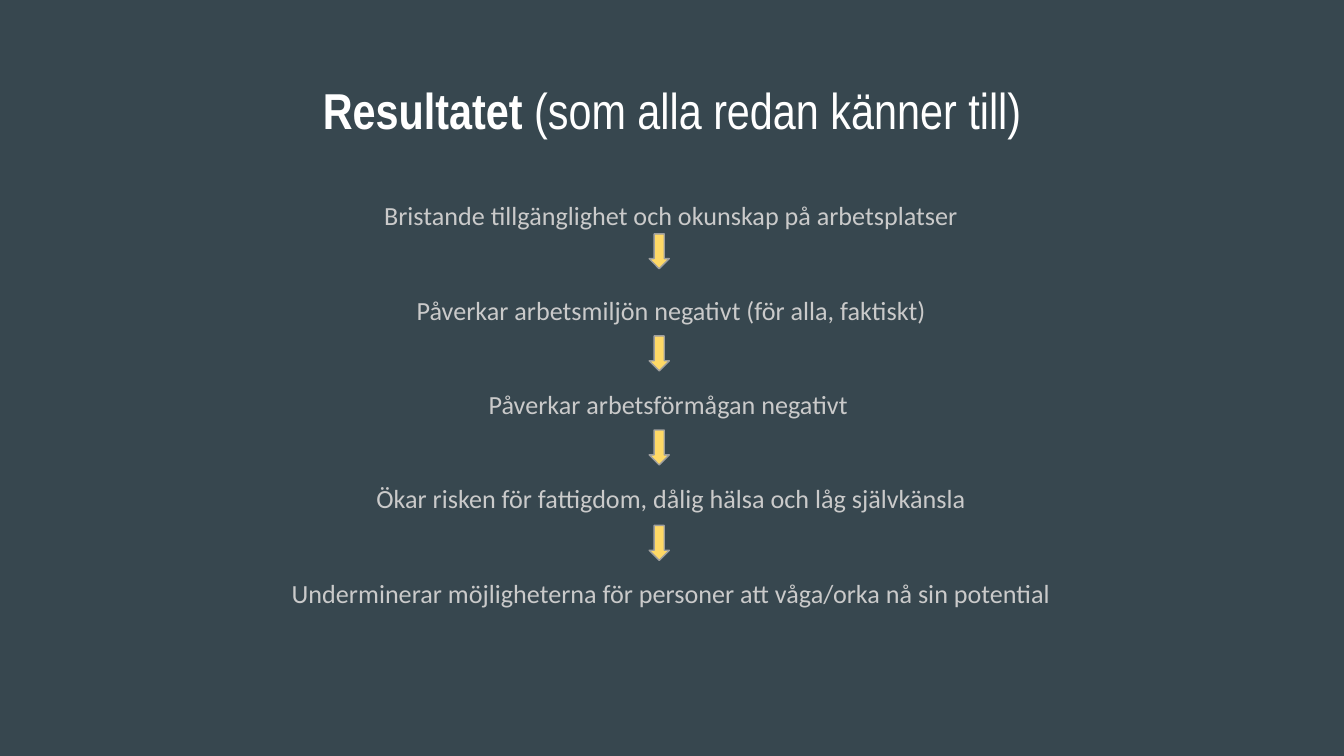
import pptx
import pptx.util
import pptx.dml.color
import pptx.enum.shapes
import pptx.enum.text

Inches = pptx.util.Inches
Pt = pptx.util.Pt
RGBColor = pptx.dml.color.RGBColor

BACKGROUND = RGBColor(0x37, 0x47, 0x4F)
WHITE = RGBColor(0xFF, 0xFF, 0xFF)
LIGHT_GREY = RGBColor(0xCA, 0xCA, 0xCA)
YELLOW = RGBColor(0xFF, 0xD9, 0x66)
OUTLINE_GREY = RGBColor(0x9E, 0x9E, 0x9E)

CONSEQUENCES = [
    "Bristande tillgänglighet och okunskap på arbetsplatser",
    "Påverkar arbetsmiljön negativt (för alla, faktiskt)",
    "Påverkar arbetsförmågan negativt ",
    "Ökar risken för fattigdom, dålig hälsa och låg självkänsla",
    "Underminerar möjligheterna för personer att våga/orka nå sin potential",
]
ARROW_TOPS = [1.74, 2.5, 3.2, 3.91]


def prepare_frame(frame):
    frame.word_wrap = True
    frame.auto_size = pptx.enum.text.MSO_AUTO_SIZE.NONE
    frame.vertical_anchor = pptx.enum.text.MSO_ANCHOR.TOP
    frame.margin_left = frame.margin_right = Inches(0.1)
    frame.margin_top = frame.margin_bottom = Inches(0.1)


def format_paragraph(paragraph, font_name, size, color):
    paragraph.alignment = pptx.enum.text.PP_ALIGN.CENTER
    paragraph.font.name = font_name
    paragraph.font.size = Pt(size)
    paragraph.font.color.rgb = color


def set_title(slide):
    title = slide.shapes.title
    title.left, title.top = Inches(0.34), Inches(0.49)
    title.width, title.height = Inches(9.32), Inches(0.63)
    prepare_frame(title.text_frame)
    heading = title.text_frame.paragraphs[0]
    format_paragraph(heading, "Arial Narrow", 27, WHITE)
    for words, bold in [("Resultatet ", True), ("(som alla redan känner till)", False)]:
        run = heading.add_run()
        run.text = words
        run.font.bold = bold


def add_consequences(slide):
    chain = slide.shapes.add_textbox(Inches(1.83), Inches(1.35), Inches(6.33), Inches(3.74))
    frame = chain.text_frame
    prepare_frame(frame)
    for index, consequence in enumerate(CONSEQUENCES):
        step = frame.add_paragraph() if index else frame.paragraphs[0]
        step.text = consequence
        step.line_spacing = 1.15
        step.space_before = Pt(31.3 if index else 0)
        format_paragraph(step, "Calibri", 14, LIGHT_GREY)


def add_down_arrow(slide, top):
    arrow = slide.shapes.add_shape(
        pptx.enum.shapes.MSO_SHAPE.DOWN_ARROW,
        Inches(4.83), Inches(top), Inches(0.15), Inches(0.26),
    )
    arrow.shadow.inherit = False
    arrow.fill.solid()
    arrow.fill.fore_color.rgb = YELLOW
    arrow.line.color.rgb = OUTLINE_GREY
    arrow.line.width = Pt(0.75)


def main():
    presentation = pptx.Presentation()
    presentation.slide_width = Inches(10)
    presentation.slide_height = presentation.slide_width * 9 // 16
    slide = presentation.slides.add_slide(presentation.slide_layouts[5])
    slide.background.fill.solid()
    slide.background.fill.fore_color.rgb = BACKGROUND
    set_title(slide)
    add_consequences(slide)
    for top in ARROW_TOPS:
        add_down_arrow(slide, top)
    presentation.save("out.pptx")


if __name__ == "__main__":
    main()
